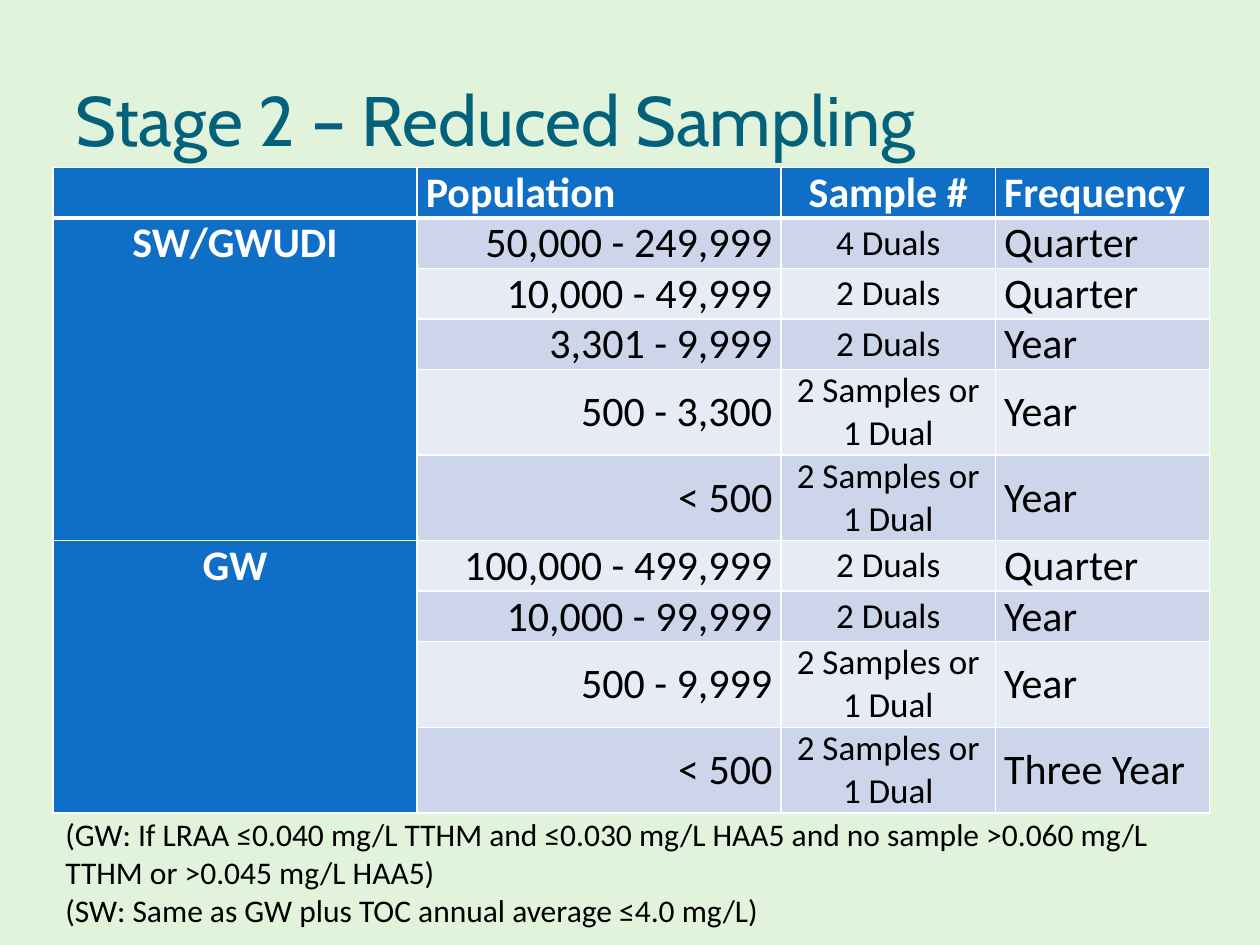
from lxml.etree import fromstring
from pptx import Presentation
from pptx.dml.color import RGBColor
from pptx.enum.text import MSO_ANCHOR as Anchor, PP_ALIGN as Align
from pptx.oxml.ns import nsdecls
from pptx.util import Inches, Pt

BLUE, WHITE, BLACK = "0F6FC6", "FFFFFF", "000000"
BANDS = ["CCD5EA", "E7EBF5"]
HEAD = ["", "Population", "Sample #", "Frequency"]
PAIR = "2 Samples or 1 Dual"
GROUPS = {
    "SW/GWUDI": [
        ("50,000 - 249,999", "4 Duals", "Quarter"),
        ("10,000 - 49,999", "2 Duals", "Quarter"),
        ("3,301 - 9,999", "2 Duals", "Year"),
        ("500 - 3,300", PAIR, "Year"),
        ("< 500", PAIR, "Year"),
    ],
    "GW": [
        ("100,000 - 499,999", "2 Duals", "Quarter"),
        ("10,000 - 99,999", "2 Duals", "Year"),
        ("500 - 9,999", PAIR, "Year"),
        ("< 500", PAIR, "Three Year"),
    ],
}
NOTES = [
    "(GW: If LRAA ≤0.040 mg/L TTHM and ≤0.030 mg/L HAA5 and no sample "
    ">0.060 mg/L TTHM or >0.045 mg/L HAA5)",
    "(SW: Same as GW plus TOC annual average ≤4.0 mg/L)",
]
WIDTHS = [2.89, 2.89, 1.7, 1.7]
ALIGNS = [Align.RIGHT, Align.CENTER, Align.LEFT]
SIZES = [24, 20, 24]


def paint(fill, color):
    fill.solid()
    fill.fore_color.rgb = RGBColor.from_string(color)


def style(para, size, color, font="Calibri", bold=False, align=Align.LEFT):
    para.alignment = align
    for run in para.runs:
        run.font.size = Pt(size)
        run.font.name = font
        run.font.bold = bold
        run.font.color.rgb = RGBColor.from_string(color)


def add_text(slide, box, lines, size, color, font="Calibri"):
    frame = slide.shapes.add_textbox(*map(Inches, box)).text_frame
    frame.word_wrap = True
    frame.text = "\n".join(lines)
    for para in frame.paragraphs:
        style(para, size, color, font)
    return frame


def edge(cell, row):
    widths = {
        "L": 1,
        "R": 1,
        "T": 3 if row == 1 else 1,
        "B": 3 if row == 0 else 1,
    }
    props = cell._tc.get_or_add_tcPr()
    for spot, (side, width) in enumerate(widths.items()):
        props.insert(spot, fromstring(
            f'<a:ln{side} {nsdecls("a")} w="{Pt(width)}"><a:solidFill>'
            f'<a:srgbClr val="{WHITE}"/></a:solidFill></a:ln{side}>'))


def set_cell(cell, row, text, fill, anchor, size=24, color=WHITE,
             bold=True, align=Align.LEFT):
    cell.margin_left = cell.margin_right = Inches(0.07)
    cell.margin_top = cell.margin_bottom = 0
    cell.vertical_anchor = anchor
    cell.text = text
    style(cell.text_frame.paragraphs[0], size, color, bold=bold, align=align)
    paint(cell.fill, fill)
    edge(cell, row)


def add_grid(slide):
    rows = [row for group in GROUPS.values() for row in group]
    highs = [0.4] + [0.68 if row[1] == PAIR else 0.4 for row in rows]
    grid = slide.shapes.add_table(
        len(highs), len(WIDTHS), Inches(0.42), Inches(1.33),
        Inches(sum(WIDTHS)), Inches(sum(highs))).table
    grid.first_row = grid.horz_banding = False
    for col, width in zip(grid.columns, WIDTHS):
        col.width = Inches(width)
    for line, high in zip(grid.rows, highs):
        line.height = Inches(high)

    for col, text in enumerate(HEAD):
        align = Align.CENTER if col == 2 else Align.LEFT
        set_cell(grid.cell(0, col), 0, text, BLUE, Anchor.BOTTOM, align=align)
    for num, row in enumerate(rows, 1):
        fill = BANDS[(num - 1) % 2]
        for col, text in enumerate(row):
            set_cell(grid.cell(num, col + 1), num, text, fill, Anchor.MIDDLE,
                     SIZES[col], BLACK, False, ALIGNS[col])

    top = 1
    for name, group in GROUPS.items():
        end = top + len(group)
        for num in range(top, end):
            set_cell(grid.cell(num, 0), num, name if num == top else "",
                     BLUE, Anchor.TOP, align=Align.CENTER)
        grid.cell(top, 0).merge(grid.cell(end - 1, 0))
        top = end


def main():
    deck = Presentation()
    deck.slide_width, deck.slide_height = Inches(10), Inches(7.5)
    slide = deck.slides.add_slide(deck.slide_layouts[6])
    paint(slide.background.fill, "E2F3DC")
    title = add_text(slide, (0.5, 0.42, 9, 0.95),
                     ["Stage 2 – Reduced Sampling"], 40, "04617B", "Cabin")
    title.vertical_anchor = Anchor.BOTTOM
    title.margin_bottom = Inches(0.1)
    add_grid(slide)
    add_text(slide, (0.42, 6.42, 9, 1.01), NOTES, 18, BLACK)
    deck.save("out.pptx")


if __name__ == "__main__":
    main()
